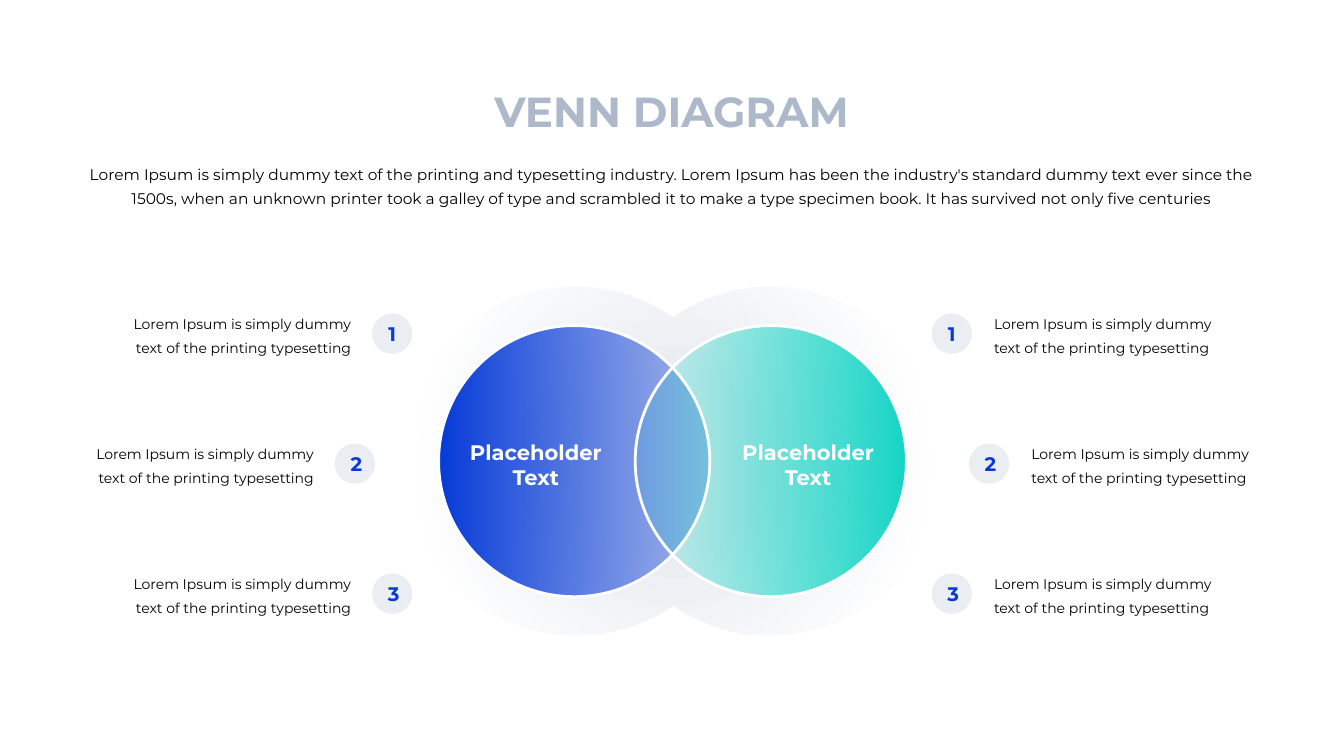
from lxml import etree
from pptx import Presentation
from pptx.dml.color import RGBColor
from pptx.enum import shapes, text
from pptx.oxml import ns
from pptx.util import Inches, Pt

BLUE = RGBColor(0x05, 0x3A, 0xD8)
TEAL = RGBColor(0x15, 0xD5, 0xC6)
MIST = RGBColor(0xD6, 0xDC, 0xE5)
SLATE = RGBColor(0xAD, 0xB9, 0xCA)
WHITE = RGBColor(0xFF, 0xFF, 0xFF)
BLACK = RGBColor(0, 0, 0)

FONT = "Montserrat"
WIDTH = 13.33
CIRCLE = 2.69
CIRCLE_TOP = 3.23
CIRCLE_LEFTS = (4.35, 6.3)
BADGE = 0.4
ITEM_WIDTH = 2.34
CENTER = text.PP_ALIGN.CENTER

HALO_FRAME = (3.97, 2.85, 5.39, 3.46)
HALO_START = (6.67, 3.15)
HALO_CURVES = (
    ((5.55, 2.38), (4.02, 3.15), (3.97, 4.51)),
    ((3.92, 5.92), (5.49, 6.79), (6.67, 6.01)),
    ((7.83, 6.79), (9.39, 5.93), (9.36, 4.53)),
    ((9.33, 3.16), (7.79, 2.38), (6.67, 3.15)),
)

INTRO = (
    "Lorem Ipsum is simply dummy text of the printing and typesetting industry. "
    "Lorem Ipsum has been the industry's standard dummy text ever since the 1500s, "
    "when an unknown printer took a galley of type and scrambled it to make a type "
    "specimen book. It has survived not only five centuries"
)
ITEM = "Lorem Ipsum is simply dummy text of the printing typesetting"


def write(frame, words, size, color, align, bold=False, spacing=None):
    frame.word_wrap = True
    para = frame.paragraphs[0]
    para.alignment = align
    if spacing:
        para.line_spacing = Pt(spacing)
    span = para.add_run()
    span.text = words
    span.font.name = FONT
    span.font.size = Pt(size)
    span.font.bold = bold
    span.font.color.rgb = color


def add_label(page, left, top, width, height, words, size, color, align=CENTER,
              bold=False, spacing=None, inset=0.03):
    box = page.shapes.add_textbox(Inches(left), Inches(top), Inches(width), Inches(height))
    frame = box.text_frame
    frame.auto_size = text.MSO_AUTO_SIZE.SHAPE_TO_FIT_TEXT
    if inset:
        frame.margin_left = frame.margin_right = Inches(inset)
        frame.margin_top = frame.margin_bottom = Inches(inset)
    write(frame, words, size, color, align, bold, spacing)


def add_circle(page, left, top, size):
    circle = page.shapes.add_shape(
        shapes.MSO_SHAPE.OVAL, Inches(left), Inches(top), Inches(size), Inches(size))
    circle.shadow.inherit = False
    circle.fill.background()
    circle.line.fill.background()
    return circle


def set_opacity(shape, *percents):
    colors = shape._element.spPr.iter(ns.qn("a:srgbClr"))
    for color, percent in zip(colors, percents):
        etree.SubElement(color, ns.qn("a:alpha"), val=str(percent * 1000))


def fade(shape, color, positions, opacities, angle=0):
    shape.fill.gradient()
    shape.fill.gradient_angle = angle
    for stop, position in zip(shape.fill.gradient_stops, positions):
        stop.color.rgb = color
        stop.position = position
    set_opacity(shape, *opacities)


def make_radial(shape):
    linear = shape._element.spPr.find(".//" + ns.qn("a:lin"))
    radial = etree.Element(ns.qn("a:path"), path="circle")
    etree.SubElement(radial, ns.qn("a:fillToRect"), l="50000", t="50000", r="50000", b="50000")
    linear.getparent().replace(linear, radial)


def add_curved_shape(page, frame, start, curves):
    left, top, width, height = (Inches(length) for length in frame)
    builder = page.shapes.build_freeform(left, top)
    builder.add_line_segments(
        [(left + width, top), (left + width, top + height), (left, top + height)])
    shape = builder.convert_to_shape()
    outline = shape._element.spPr.find(".//" + ns.qn("a:path"))
    for segment in list(outline):
        outline.remove(segment)
    for tag, points in [("a:moveTo", [start])] + [("a:cubicBezTo", curve) for curve in curves]:
        segment = etree.SubElement(outline, ns.qn(tag))
        for x, y in points:
            etree.SubElement(segment, ns.qn("a:pt"),
                             x=str(Inches(x) - left), y=str(Inches(y) - top))
    etree.SubElement(outline, ns.qn("a:close"))
    return shape


def add_halo(page):
    halo = add_curved_shape(page, HALO_FRAME, HALO_START, HALO_CURVES)
    halo.shadow.inherit = False
    halo.line.fill.background()
    fade(halo, MIST, (0.3, 0.8), (50, 0))
    make_radial(halo)


def add_venn(page):
    add_halo(page)
    for left, color, opacity, angle in zip(CIRCLE_LEFTS, (BLUE, TEAL), (30, 10), (0, 180)):
        disc = add_circle(page, left, CIRCLE_TOP, CIRCLE)
        fade(disc, color, (0, 1), (100, opacity), angle)
    for left in CIRCLE_LEFTS:
        ring = add_circle(page, left, CIRCLE_TOP, CIRCLE)
        ring.line.color.rgb = WHITE
        ring.line.width = Pt(2)
    for left in (7.26, 4.56):
        add_label(page, left, 4.33, 1.51, 0.56, "Placeholder Text", 15, WHITE, bold=True)


def add_item(page, number, top, badge_left, text_left, align):
    badge = add_circle(page, badge_left, top, BADGE)
    badge.fill.solid()
    badge.fill.fore_color.rgb = MIST
    set_opacity(badge, 50)
    badge.text_frame.vertical_anchor = text.MSO_ANCHOR.MIDDLE
    write(badge.text_frame, str(number), 14, BLUE, CENTER, bold=True)
    add_label(page, text_left, top - 0.08, ITEM_WIDTH, 0.51, ITEM, 10, BLACK, align, spacing=17)


def add_items(page, badge_left, text_left, direction, align):
    for row, shift in enumerate((0, 0.37 * direction, 0)):
        add_item(page, row + 1, 3.11 + 1.29 * row, badge_left + shift, text_left + shift, align)


def main():
    deck = Presentation()
    deck.slide_width, deck.slide_height = Inches(WIDTH), Inches(7.5)
    page = deck.slides.add_slide(deck.slide_layouts[6])
    add_label(page, 0.78, 1.56, 11.77, 0.51, INTRO, 11, BLACK, spacing=17)
    add_label(page, 3.02, 0.8, 7.28, 0.61, "VENN DIAGRAM", 30, SLATE, bold=True, inset=None)
    add_venn(page)
    add_items(page, 3.69, 1.17, -1, text.PP_ALIGN.RIGHT)
    add_items(page, 9.24, 9.83, 1, text.PP_ALIGN.LEFT)
    deck.save("out.pptx")


if __name__ == "__main__":
    main()
